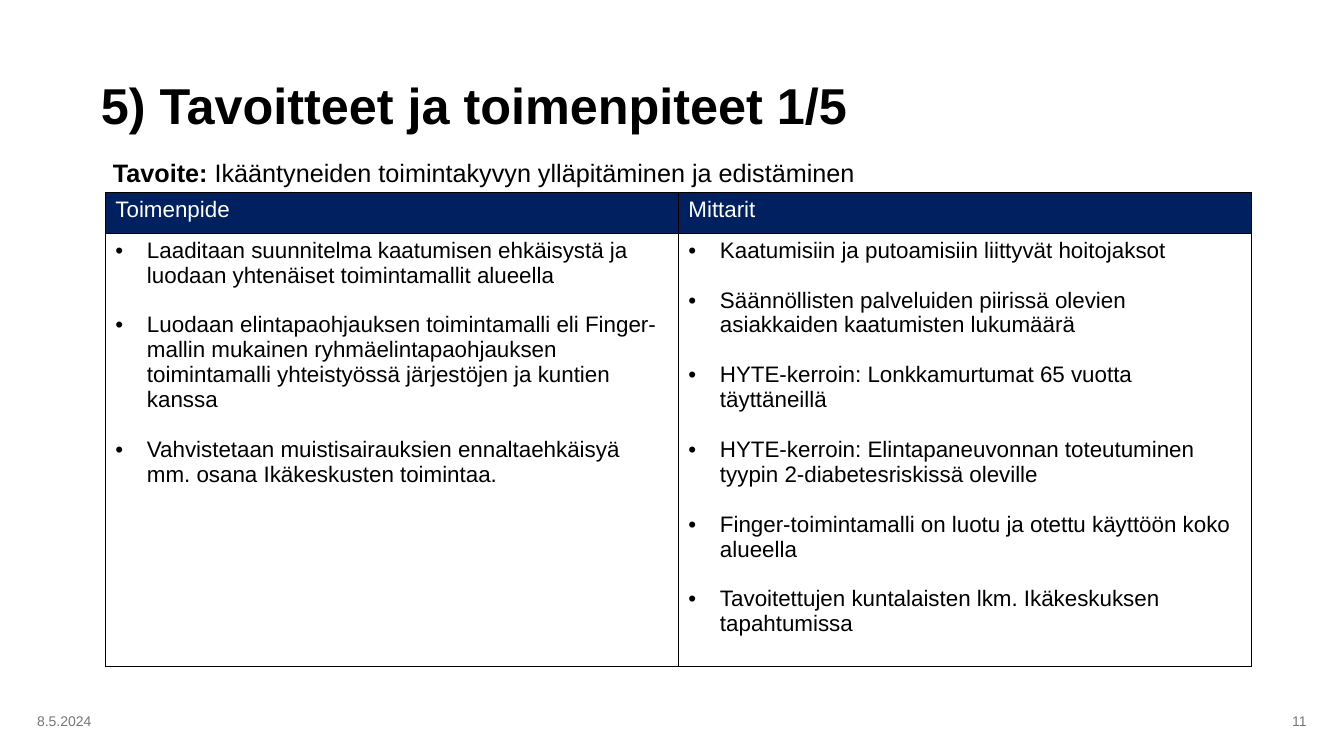
from dataclasses import dataclass

from lxml import etree
from pptx import Presentation
from pptx import util as u
from pptx.dml.color import RGBColor
from pptx.enum import text
from pptx.oxml import ns


@dataclass(frozen=True)
class Theme:
    font: str = "Arial"
    ink: str = "000000"
    white: str = "FFFFFF"
    navy: str = "002060"
    grey: str = "767676"
    title: float = 36
    goal: float = 18
    body: float = 16
    footer: float = 10
    border: float = 1
    indent: float = 22.5
    gap: float = 17.8


@dataclass(frozen=True)
class Box:
    left: float
    top: float
    width: float
    height: float

    def lengths(self):
        return [u.Pt(v) for v in (self.left, self.top, self.width, self.height)]


THEME = Theme()
COLUMNS = {
    "Toimenpide": [
        "Laaditaan suunnitelma kaatumisen ehkäisystä ja luodaan yhtenäiset toimintamallit alueella",
        "Luodaan elintapaohjauksen toimintamalli eli Finger-mallin mukainen "
        "ryhmäelintapaohjauksen toimintamalli yhteistyössä järjestöjen ja kuntien kanssa",
        "Vahvistetaan muistisairauksien ennaltaehkäisyä mm. osana Ikäkeskusten toimintaa.",
    ],
    "Mittarit": [
        "Kaatumisiin ja putoamisiin liittyvät hoitojaksot",
        "Säännöllisten palveluiden piirissä olevien asiakkaiden kaatumisten lukumäärä",
        "HYTE-kerroin: Lonkkamurtumat 65 vuotta täyttäneillä",
        "HYTE-kerroin: Elintapaneuvonnan toteutuminen tyypin 2-diabetesriskissä oleville",
        "Finger-toimintamalli on luotu ja otettu käyttöön koko alueella",
        "Tavoitettujen kuntalaisten lkm. Ikäkeskuksen tapahtumissa",
    ],
}


def style(span, size, color, bold=False):
    span.font.name = THEME.font
    span.font.size = u.Pt(size)
    span.font.bold = bold
    span.font.color.rgb = RGBColor.from_string(color)


def add_title(page, box, wording):
    title = page.shapes.title
    title.left, title.top, title.width, title.height = box.lengths()
    frame = title.text_frame
    frame.text = wording
    frame.auto_size = text.MSO_AUTO_SIZE.NONE
    frame.vertical_anchor = text.MSO_ANCHOR.MIDDLE
    frame.margin_left = frame.margin_right = u.Pt(6)
    frame.margin_top = frame.margin_bottom = u.Pt(3)
    para = frame.paragraphs[0]
    para.alignment = text.PP_ALIGN.LEFT
    para.line_spacing = 0.9
    style(para.runs[0], THEME.title, THEME.ink, True)


def add_label(page, box, spans, size, color, align=text.PP_ALIGN.LEFT, anchor=text.MSO_ANCHOR.MIDDLE):
    frame = page.shapes.add_textbox(*box.lengths()).text_frame
    frame.word_wrap = True
    frame.vertical_anchor = anchor
    para = frame.paragraphs[0]
    para.alignment = align
    for wording, bold in spans:
        span = para.add_run()
        span.text = wording
        style(span, size, color, bold)


def add_footer(page, box, date, number):
    date_box = Box(box.left, box.top, 108, box.height)
    number_box = Box(box.left + box.width - 216, box.top, 216, box.height)
    add_label(page, date_box, [(date, False)], THEME.footer, THEME.grey)
    add_label(page, number_box, [(number, False)], THEME.footer, THEME.grey, text.PP_ALIGN.RIGHT)


def format_cell(cell, fill):
    properties = cell._tc.get_or_add_tcPr()
    for side in ("a:lnL", "a:lnR", "a:lnT", "a:lnB"):
        line = etree.SubElement(properties, ns.qn(side), w=str(u.Pt(THEME.border)))
        solid = etree.SubElement(line, ns.qn("a:solidFill"))
        etree.SubElement(solid, ns.qn("a:srgbClr"), val=THEME.ink)
    cell.fill.solid()
    cell.fill.fore_color.rgb = RGBColor.from_string(fill)


def add_bullet(para):
    properties = para._p.get_or_add_pPr()
    properties.set("marL", str(u.Pt(THEME.indent)))
    properties.set("indent", str(-u.Pt(THEME.indent)))
    etree.SubElement(properties, ns.qn("a:buFont"), typeface=THEME.font)
    etree.SubElement(properties, ns.qn("a:buChar"), char="•")


def add_goal_table(page, box, columns, header_height):
    table = page.shapes.add_table(2, len(columns), *box.lengths()).table
    table.horz_banding = False
    table.rows[0].height = u.Pt(header_height)
    table.rows[1].height = u.Pt(box.height - header_height)
    for index, (heading, items) in enumerate(columns.items()):
        table.columns[index].width = u.Pt(box.width / len(columns))
        header, body = table.cell(0, index), table.cell(1, index)
        format_cell(header, THEME.navy)
        format_cell(body, THEME.white)
        header.text_frame.text = heading
        style(header.text_frame.paragraphs[0].runs[0], THEME.body, THEME.white)
        body.text_frame.text = "\n".join(items)
        for position, para in enumerate(body.text_frame.paragraphs):
            add_bullet(para)
            if position:
                para.space_before = u.Pt(THEME.gap)
            style(para.runs[0], THEME.body, THEME.ink)


def main():
    deck = Presentation()
    deck.slide_width, deck.slide_height = u.Pt(960), u.Pt(540)
    page = deck.slides.add_slide(deck.slide_layouts[5])
    add_title(page, Box(66, 28.8, 793.5, 97.2), "5) Tavoitteet ja toimenpiteet 1/5")
    add_goal_table(page, Box(75.3, 137.3, 818.6, 338.6), COLUMNS, 29.2)
    goal = [("Tavoite: ", True), ("Ikääntyneiden toimintakyvyn ylläpitäminen ja edistäminen", False)]
    add_label(page, Box(73.6, 108.6, 643.7, 29), goal, THEME.goal, THEME.ink, anchor=text.MSO_ANCHOR.TOP)
    add_footer(page, Box(19.4, 500.4, 921, 28.8), "8.5.2024", "11")
    deck.save("out.pptx")


if __name__ == "__main__":
    main()
